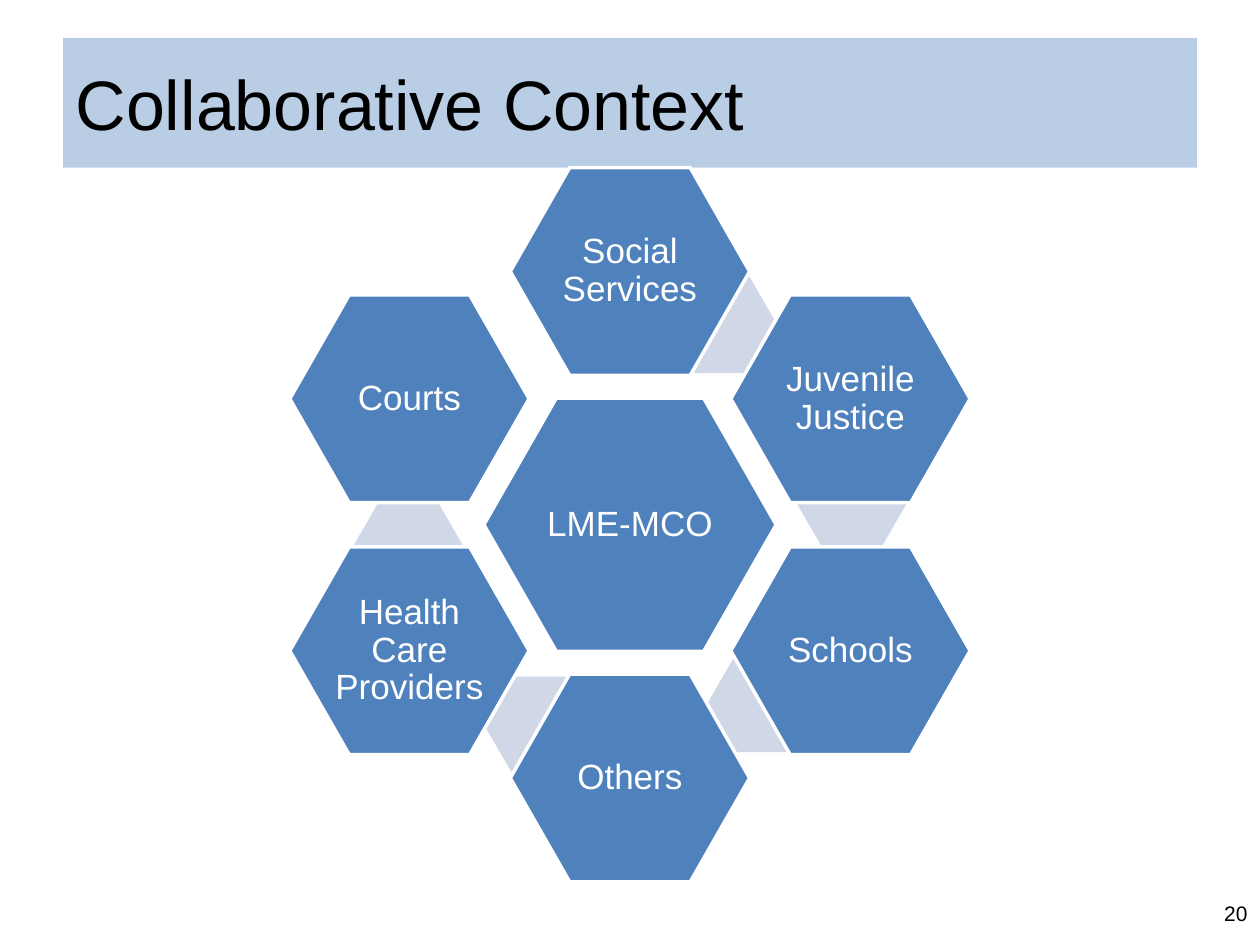
from dataclasses import dataclass

from pptx import Presentation
from pptx.dml.color import RGBColor
from pptx.enum.shapes import MSO_SHAPE
from pptx.enum.text import MSO_ANCHOR, PP_ALIGN
from pptx.util import Inches, Pt


@dataclass(frozen=True)
class Theme:
    font: str = "Arial"
    blue: RGBColor = RGBColor(0x4F, 0x81, 0xBD)
    pale: RGBColor = RGBColor(0xD0, 0xD8, 0xE8)
    band: RGBColor = RGBColor(0xB9, 0xCD, 0xE5)
    white: RGBColor = RGBColor(0xFF, 0xFF, 0xFF)
    black: RGBColor = RGBColor(0, 0, 0)
    head: int = 40
    body: int = 20
    small: int = 12


theme = Theme()


def write(shape, text, size, color, align=PP_ALIGN.LEFT, space=None, inset=None):
    frame = shape.text_frame
    frame.word_wrap = True
    frame.vertical_anchor = MSO_ANCHOR.MIDDLE
    if inset is not None:
        frame.margin_left = frame.margin_right = Inches(inset)
        frame.margin_top = frame.margin_bottom = Inches(inset)
    para = frame.paragraphs[0]
    para.alignment = align
    para.line_spacing = space
    run = para.add_run()
    run.text = text
    run.font.name = theme.font
    run.font.size = Pt(size)
    run.font.color.rgb = color


def add_hex(x, y, width, height, fill, slant):
    """Add a hexagon centred on x, y."""
    shape = slide.shapes.add_shape(
        MSO_SHAPE.HEXAGON, Inches(x - width / 2), Inches(y - height / 2),
        Inches(width), Inches(height))
    shape.adjustments[0] = slant
    shape.adjustments[1] = 1.1547
    shape.shadow.inherit = False
    shape.fill.solid()
    shape.fill.fore_color.rgb = fill
    shape.line.fill.background()
    return shape


deck = Presentation()
deck.slide_width = Inches(10)
deck.slide_height = Inches(7.5)
slide = deck.slides.add_slide(deck.slide_layouts[5])

# Pale links lie behind the ring of partners
links = [(5.73, 2.58), (6.76, 3.99), (6.05, 5.59), (4.28, 5.75), (3.24, 4.34)]
for x, y in links:
    add_hex(x, y, 0.88, 0.76, theme.pale, 0.289)

# Hub and partners, as offsets from the hub
mid_x, mid_y = 5, 4.165
side, near, far = 1.75, 1, 2.01
cells = [
    ("LME-MCO", 0, 0, 2.32, 2.01),
    ("Social Services", 0, -far, 1.9, 1.65),
    ("Juvenile Justice", side, -near, 1.9, 1.65),
    ("Schools", side, near, 1.9, 1.65),
    ("Others", 0, far, 1.9, 1.65),
    ("Health Care Providers", -side, near, 1.9, 1.65),
    ("Courts", -side, -near, 1.9, 1.65),
]
for label, dx, dy, width, height in cells:
    cell = add_hex(mid_x + dx, mid_y + dy, width, height, theme.blue, 0.286)
    cell.line.color.rgb = theme.white
    cell.line.width = Pt(2)
    write(cell, label, theme.body, theme.white,
          align=PP_ALIGN.CENTER, space=0.9, inset=0.03)

title = slide.shapes.title
title.left, title.top = Inches(0.5), Inches(0.3)
title.width, title.height = Inches(9), Inches(1.03)
title.fill.solid()
title.fill.fore_color.rgb = theme.band
write(title, "Collaborative Context", theme.head, theme.black)

number = slide.shapes.add_textbox(
    Inches(7.67), Inches(7), Inches(2.33), Inches(0.5))
write(number, "20", theme.small, theme.black, align=PP_ALIGN.RIGHT)

deck.save("out.pptx")
